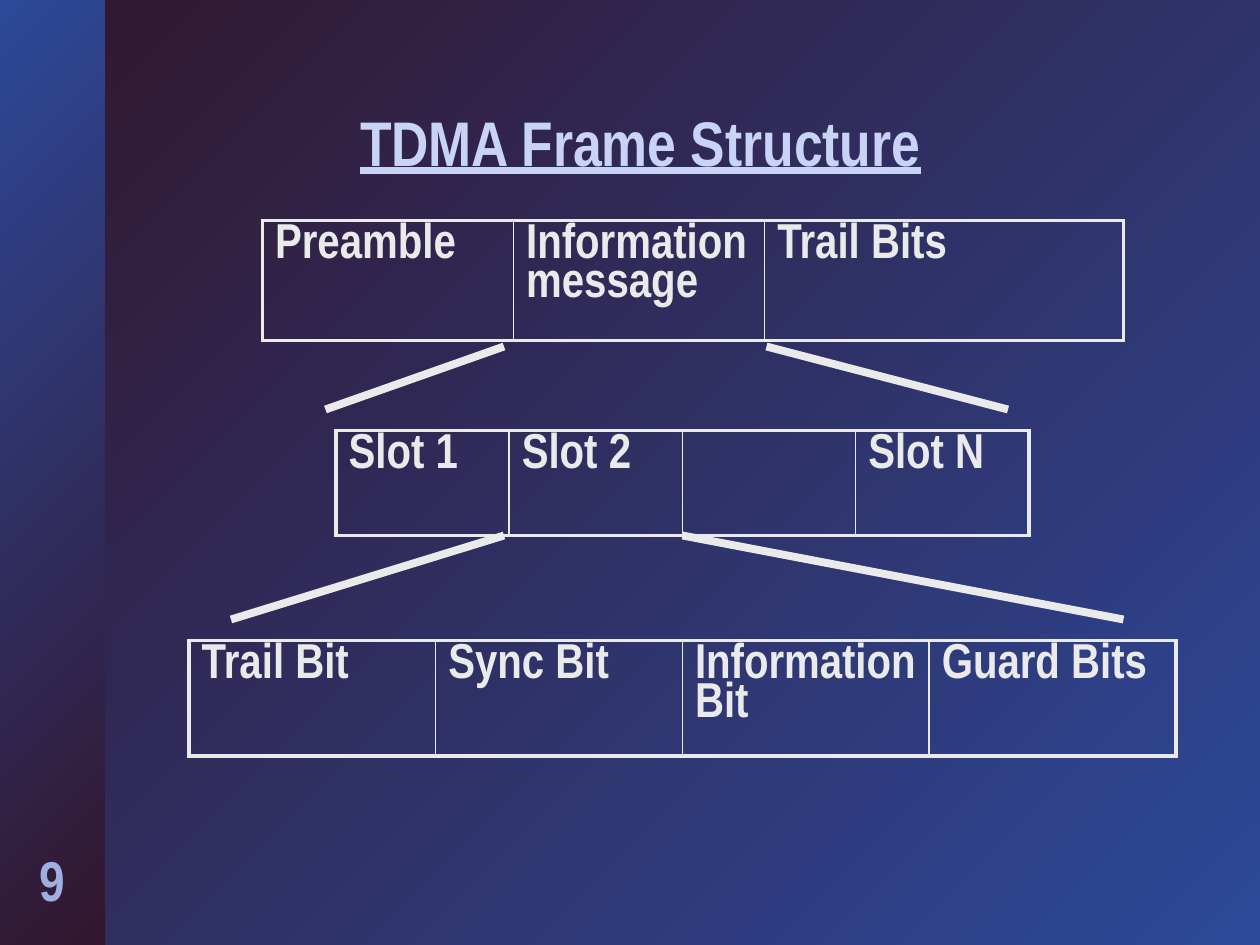
"""Build the TDMA frame structure slide."""
from lxml.etree import SubElement
from pptx import Presentation
from pptx.dml.color import RGBColor
from pptx.enum.shapes import MSO_CONNECTOR, MSO_SHAPE
from pptx.enum.text import MSO_ANCHOR, PP_ALIGN
from pptx.oxml import parse_xml
from pptx.oxml.ns import nsdecls, qn
from pptx.util import Pt

PALE, PLUM, BLUE = "EAEAEA", "32162D", "2D4999"


def color(hex_string):
    return RGBColor.from_string(hex_string)


def style(font, size, hex_string):
    font.name, font.size, font.bold = "Arial Narrow", Pt(size), True
    font.color.rgb = color(hex_string)


presentation = Presentation()
presentation.slide_width, presentation.slide_height = Pt(720), Pt(540)
slide = presentation.slides.add_slide(presentation.slide_layouts[6])

sidebar = slide.shapes.add_shape(MSO_SHAPE.RECTANGLE, 0, 0, Pt(60), Pt(540))
sidebar.shadow.inherit = False
sidebar.line.fill.background()
for fill, ends in ((slide.background.fill, (PLUM, BLUE)), (sidebar.fill, (BLUE, PLUM))):
    fill.gradient()
    fill.gradient_angle = 315
    for stop, position, end in zip(fill.gradient_stops, (0, 1), ends):
        stop.position = position
        stop.color.rgb = color(end)

for wording, box, size, hue in (
    ("9", (6, 480, 48, 45), 32, "9EB0E2"),
    ("TDMA Frame Structure", (81, 60, 570, 47.5), 36, "C8D3F6"),
):
    frame = slide.shapes.add_textbox(*map(Pt, box)).text_frame
    frame.word_wrap = True
    frame.vertical_anchor = MSO_ANCHOR.MIDDLE
    heading = frame.paragraphs[0]
    heading.text = wording
    heading.alignment = PP_ALIGN.CENTER
    style(heading.font, size, hue)

heading.line_spacing = 0.9
heading.font.underline = True
title_run = heading.runs[0]
style(title_run.font, 36, "C8D3F6")
title_run.font.underline = True
title_run.font.fill._xPr.find(qn("a:solidFill")).addnext(parse_xml(
    f'<a:effectLst {nsdecls("a")}><a:outerShdw dist="35921" dir="2700000">'
    '<a:srgbClr val="003333"/></a:outerShdw></a:effectLst>'))

for left, top, height, widths, labels in (
    (150, 126, 68.5, (143.5, 143.5, 205), ("Preamble", "Information message", "Trail Bits")),
    (192, 246, 60, (99,) * 4, ("Slot 1", "Slot 2", "", "Slot N")),
    (108, 366, 66, (141,) * 4, ("Trail Bit", "Sync Bit", "Information Bit", "Guard Bits")),
):
    table = slide.shapes.add_table(
        1, len(labels), Pt(left), Pt(top), Pt(sum(widths)), Pt(height)).table
    table.first_row = table.horz_banding = False
    last = len(labels) - 1
    for index, (label, width) in enumerate(zip(labels, widths)):
        table.columns[index].width = Pt(width)
        cell = table.cell(0, index)
        field = cell.text_frame.paragraphs[0]
        field.text = label
        field.line_spacing = 0.85
        field.space_after = Pt(5.6)
        style(field.font, 28, PALE)
        properties = cell._tc.get_or_add_tcPr()
        for side, outer in (("L", index == 0), ("R", index == last), ("T", True), ("B", True)):
            border = SubElement(properties, qn(f"a:ln{side}"), w=str(Pt(2.25 if outer else 1)))
            SubElement(SubElement(border, qn("a:solidFill")), qn("a:srgbClr"), val=PALE)
        cell.fill.background()

for ends in (
    (186, 234, 288, 198),
    (132, 354, 288, 306),
    (390, 306, 642, 354),
    (576, 234, 438, 198),
):
    expansion = slide.shapes.add_connector(MSO_CONNECTOR.STRAIGHT, *map(Pt, ends))
    expansion.line.width = Pt(4.5)
    expansion.line.color.rgb = color(PALE)
    SubElement(expansion._element.spPr, qn("a:effectLst"))

presentation.save("out.pptx")
